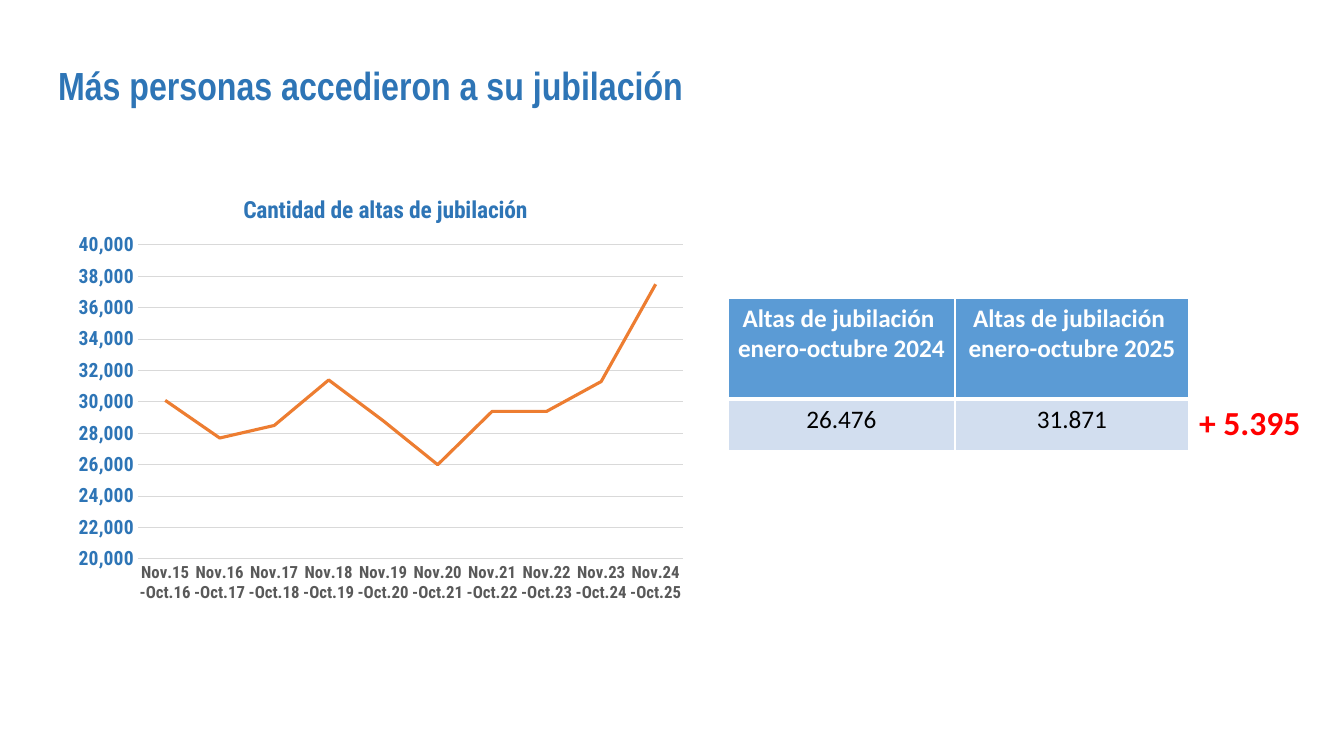
from dataclasses import dataclass

from pptx import Presentation
from pptx.chart.data import CategoryChartData
from pptx.dml.color import RGBColor
from pptx.enum.chart import XL_CHART_TYPE as ChartType, XL_MARKER_STYLE as Marker
from pptx.enum.chart import XL_TICK_MARK as TickMark
from pptx.enum.text import MSO_ANCHOR as Anchor, MSO_AUTO_SIZE as AutoSize, PP_ALIGN as Align
from pptx.oxml import parse_xml
from pptx.oxml.ns import nsdecls, qn
from pptx.util import Emu, Pt

EMU_PER_PX = 914400 / 100.8


@dataclass(frozen=True)
class Theme:
    blue: str = "2E75B6"
    header: str = "5B9BD5"
    band: str = "D2DEEF"
    orange: str = "ED7D31"
    red: str = "FF0000"
    grey: str = "595959"
    grid: str = "D9D9D9"
    white: str = "FFFFFF"
    black: str = "000000"
    title_font: str = "Arial Narrow"
    table_font: str = "Calibri"
    chart_font: str = "Roboto Condensed"
    title_size: float = 28
    change_size: float = 24
    table_size: float = 18
    chart_title_size: float = 16.8
    value_size: float = 14
    category_size: float = 12


THEME = Theme()
CHART_AREA = (67, 170, 630, 443)
PLOT_AREA = (138, 245, 545, 314)
CHART_TITLE_AT = (239, 190)
YEARLY_RETIREMENTS = [30100, 27700, 28500, 31400, 28800, 26000, 29400, 29400, 31300, 37500]


def px(length):
    return Emu(round(length * EMU_PER_PX))


def set_format(target, values):
    for name, value in values.items():
        setattr(target, name, value)


def style_font(font, name, size, color, bold=True):
    set_format(font, {"name": name, "size": Pt(size), "bold": bold})
    font.color.rgb = RGBColor.from_string(color)


def style_line(line, color, width):
    line.color.rgb = RGBColor.from_string(color)
    line.width = Pt(width)


def add_title(page, text):
    title = page.shapes.title
    set_format(title, {"left": px(48), "top": px(56), "width": px(1201), "height": px(92)})
    frame = title.text_frame
    set_format(frame, {"auto_size": AutoSize.NONE, "word_wrap": True, "vertical_anchor": Anchor.TOP})
    frame.text = text
    para = frame.paragraphs[0]
    para.alignment = Align.LEFT
    style_font(para.runs[0].font, THEME.title_font, THEME.title_size, THEME.blue)


def set_layout(element, position, values):
    for old in element.findall(qn("c:layout")):
        element.remove(old)
    settings = "".join(f'<c:{name} val="{value}"/>' for name, value in values.items())
    layout = parse_xml(
        f'<c:layout {nsdecls("c")}><c:manualLayout>{settings}</c:manualLayout></c:layout>'
    )
    element.insert(position, layout)


def chart_place(left, top):
    return {
        "xMode": "edge",
        "yMode": "edge",
        "x": round((left - CHART_AREA[0]) / CHART_AREA[2], 4),
        "y": round((top - CHART_AREA[1]) / CHART_AREA[3], 4),
    }


def place_chart_parts(chart):
    left, top, width, height = PLOT_AREA
    extent = {"w": round(width / CHART_AREA[2], 4), "h": round(height / CHART_AREA[3], 4)}
    plot_area = chart.plots[0]._element.getparent()
    set_layout(plot_area, 0, {"layoutTarget": "inner"} | chart_place(left, top) | extent)
    set_layout(chart.chart_title._element, 1, chart_place(*CHART_TITLE_AT))


def style_axes(chart):
    axes = (
        (chart.category_axis, THEME.category_size, THEME.grey),
        (chart.value_axis, THEME.value_size, THEME.blue),
    )
    for axis, size, color in axes:
        set_format(axis, {"major_tick_mark": TickMark.NONE, "minor_tick_mark": TickMark.NONE})
        style_font(axis.tick_labels.font, THEME.chart_font, size, color)
        axis._element.txPr.bodyPr.set("rot", "0")
    style_line(chart.category_axis.format.line, THEME.grid, 0.75)
    values = chart.value_axis
    set_format(values, {
        "minimum_scale": 20000, "maximum_scale": 40000,
        "major_unit": 2000, "has_major_gridlines": True,
    })
    set_format(values.tick_labels, {"number_format": "#,##0", "number_format_is_linked": False})
    values.format.line.fill.background()
    style_line(values.major_gridlines.format.line, THEME.grid, 0.75)


def add_line_chart(page, heading):
    data = CategoryChartData(number_format="#,##0")
    data.categories = [f"Nov.{year}-Oct.{year + 1}" for year in range(15, 25)]
    data.add_series("Series 1", YEARLY_RETIREMENTS)
    area = [px(length) for length in CHART_AREA]
    chart = page.shapes.add_chart(ChartType.LINE, *area, data).chart
    set_format(chart, {"has_legend": False, "has_title": True})
    style_font(chart.font, THEME.chart_font, THEME.value_size, THEME.black, False)
    frame = chart.chart_title.text_frame
    frame.text = heading
    span = frame.paragraphs[0].runs[0]
    style_font(span.font, THEME.chart_font, THEME.chart_title_size, THEME.blue)
    style_axes(chart)
    chart.plots[0].vary_by_categories = False
    series = chart.plots[0].series[0]
    series.smooth = False
    series.marker.style = Marker.NONE
    style_line(series.format.line, THEME.orange, 2.25)
    place_chart_parts(chart)


def add_borders(cell, bottom_width):
    properties = cell._tc.get_or_add_tcPr()
    widths = {"L": 1, "R": 1, "T": 1, "B": bottom_width}
    for position, (side, width) in enumerate(widths.items()):
        border = parse_xml(
            f'<a:ln{side} {nsdecls("a")} w="{Pt(width)}"><a:solidFill>'
            f'<a:srgbClr val="{THEME.white}"/></a:solidFill></a:ln{side}>'
        )
        properties.insert(position, border)


def fill_cell(cell, lines, fill, size, color, bold, align):
    if fill:
        cell.fill.solid()
        cell.fill.fore_color.rgb = RGBColor.from_string(fill)
    else:
        cell.fill.background()
    cell.text = "\n".join(lines)
    for para in cell.text_frame.paragraphs:
        para.alignment = align
        style_font(para.font, THEME.table_font, size, color, bold)
        for span in para.runs:
            style_font(span.font, THEME.table_font, size, color, bold)


def add_comparison_table(page):
    widths, heights = (227, 234, 141), (101, 50)
    table = page.shapes.add_table(
        2, 3, px(728), px(298), px(sum(widths)), px(sum(heights))
    ).table
    set_format(table, {"first_row": False, "horz_banding": False})
    for column, width in zip(table.columns, widths):
        column.width = px(width)
    for row, height in zip(table.rows, heights):
        row.height = px(height)
    header = (THEME.header, THEME.table_size, THEME.white, True, Align.CENTER)
    body = (THEME.band, THEME.table_size, THEME.black, False, Align.CENTER)
    for column, (year, amount) in enumerate(((2024, "26.476"), (2025, "31.871"))):
        heading = ["Altas de jubilación ", f"enero-octubre {year}"]
        fill_cell(table.cell(0, column), heading, *header)
        fill_cell(table.cell(1, column), [amount], *body)
    table.cell(0, 2).fill.background()
    change = (None, THEME.change_size, THEME.red, True, Align.LEFT)
    fill_cell(table.cell(1, 2), ["+ 5.395"], *change)
    for row, bottom_width in enumerate((3, 1)):
        for column in range(len(widths)):
            add_borders(table.cell(row, column), bottom_width)


def main():
    deck = Presentation()
    set_format(deck, {"slide_width": px(1344), "slide_height": px(756)})
    page = deck.slides.add_slide(deck.slide_layouts[5])
    add_title(page, "Más personas accedieron a su jubilación")
    add_comparison_table(page)
    add_line_chart(page, "Cantidad de altas de jubilación")
    deck.save("out.pptx")


if __name__ == "__main__":
    main()
